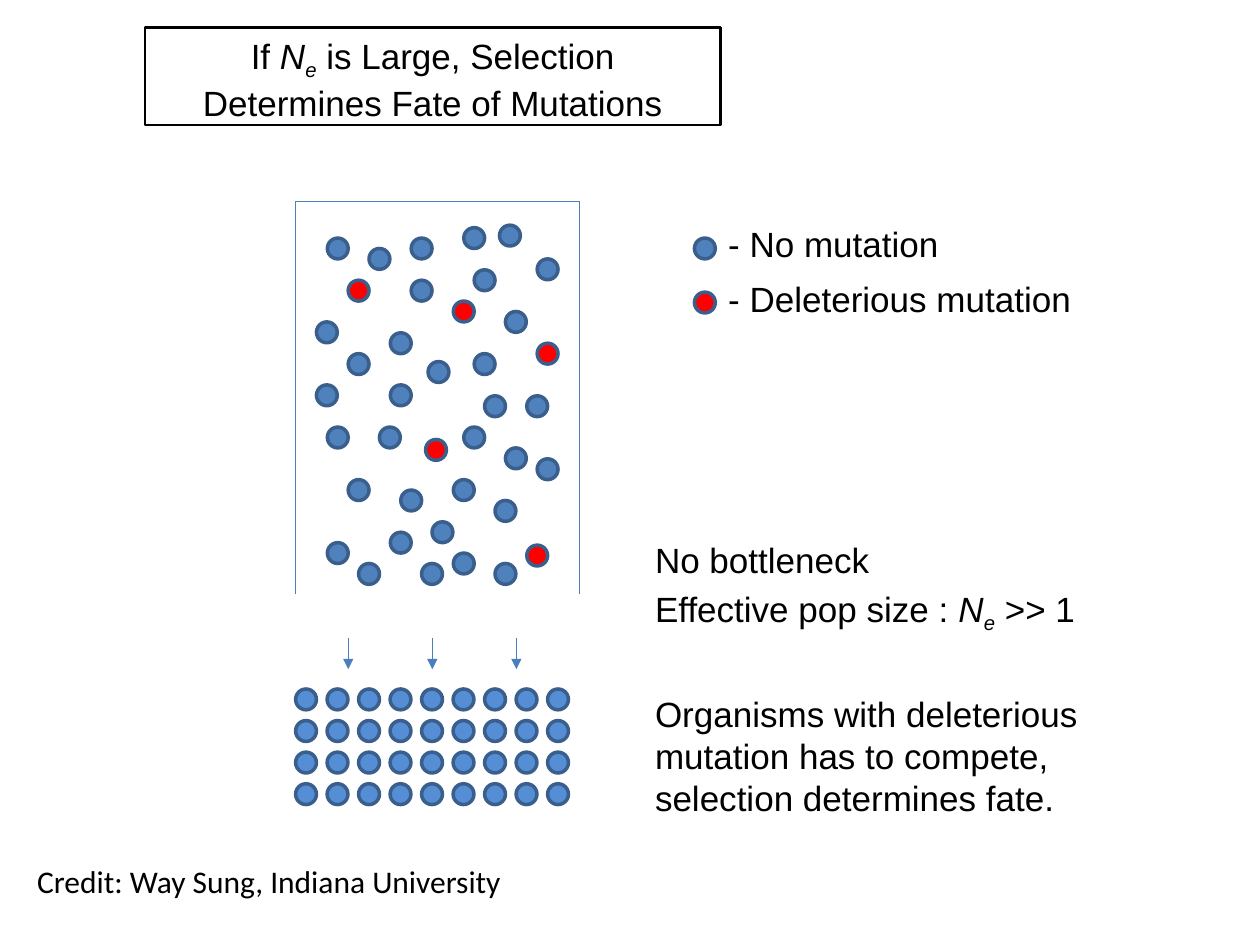
from dataclasses import dataclass

from lxml.etree import SubElement
from pptx import Presentation
from pptx.dml.color import RGBColor
from pptx.enum.shapes import MSO_CONNECTOR, MSO_SHAPE
from pptx.enum.text import MSO_ANCHOR, MSO_AUTO_SIZE, PP_ALIGN
from pptx.oxml.ns import qn
from pptx.util import Cm, Pt


@dataclass(frozen=True)
class Theme:
    text: RGBColor = RGBColor(0x00, 0x00, 0x00)
    healthy: RGBColor = RGBColor(0x4F, 0x81, 0xBD)
    mutant: RGBColor = RGBColor(0xFF, 0x00, 0x00)
    survivor: RGBColor = RGBColor(0x55, 0x8E, 0xD5)
    outline: RGBColor = RGBColor(0x3A, 0x5F, 0x8C)
    wall: RGBColor = RGBColor(0x4B, 0x7E, 0xBC)
    font: str = "Arial"
    credit_font: str = "Calibri"
    size: Pt = Pt(20)
    credit_size: Pt = Pt(18)


THEME = Theme()
DOT = 0.42

# Offsets in cm from the top left corner of the population tank
HEALTHY_DOTS = [
    (0.64, 0.74), (1.48, 0.95), (2.33, 0.74), (3.39, 0.53), (4.11, 0.48),
    (4.87, 1.16), (2.33, 1.59), (3.6, 1.38), (0.42, 2.43), (1.91, 2.65),
    (4.23, 2.22), (1.06, 3.07), (2.67, 3.23), (3.6, 3.07), (0.42, 3.7),
    (1.91, 3.7), (3.81, 3.92), (4.66, 3.92), (0.64, 4.55), (1.69, 4.55),
    (3.39, 4.55), (4.23, 4.97), (4.87, 5.19), (1.06, 5.61), (2.12, 5.82),
    (3.18, 5.61), (4.02, 6.03), (2.75, 6.46), (0.64, 6.88), (1.91, 6.67),
    (1.27, 7.3), (2.54, 7.3), (3.18, 7.09), (4.02, 7.3),
]
MUTANT_DOTS = [(1.06, 1.59), (3.18, 2.01), (4.87, 2.86), (2.62, 4.8), (4.66, 6.93)]


def set_all(target, values):
    for name, value in values.items():
        setattr(target, name, value)


def place(shape, box):
    names = ("left", "top", "width", "height")
    set_all(shape, dict(zip(names, map(Cm, box))))


def add_dot(slide, left, top, color):
    shape = slide.shapes.add_shape(
        MSO_SHAPE.OVAL, Cm(left), Cm(top), Cm(DOT), Cm(DOT))
    shape.shadow.inherit = False
    shape.fill.solid()
    shape.fill.fore_color.rgb = color
    shape.line.color.rgb = THEME.outline
    shape.line.width = Pt(2)


def add_line(slide, start, end, arrow=False):
    line = slide.shapes.add_connector(
        MSO_CONNECTOR.STRAIGHT, *map(Cm, (*start, *end)))
    line.line.color.rgb = THEME.wall
    line.line.width = Pt(0.75)
    if arrow:
        SubElement(line.line._get_or_add_ln(), qn("a:tailEnd"), type="triangle")
    SubElement(line._element.spPr, qn("a:effectLst"))


def write(paragraph, *parts, font=THEME.font, size=THEME.size):
    """Each part is a text, or a (text, style) pair."""
    for part in parts:
        text, style = (part, "") if isinstance(part, str) else part
        run = paragraph.add_run()
        run.text = text
        set_all(run.font, {"name": font, "size": size, "italic": bool(style)})
        run.font.color.rgb = THEME.text
        if style == "subscript":
            run.font._element.set("baseline", "-25000")


N_E = (("N", "italic"), ("e", "subscript"))


def add_label(slide, box, text, **style):
    label = slide.shapes.add_textbox(*map(Cm, box))
    label.text_frame.word_wrap = False
    write(label.text_frame.paragraphs[0], text, **style)


def build_title(slide, box):
    title = slide.shapes.title
    place(title, box)
    title.line.color.rgb = THEME.text
    title.line.width = Pt(1.5)
    set_all(title.text_frame, {
        "auto_size": MSO_AUTO_SIZE.NONE, "word_wrap": True,
        "vertical_anchor": MSO_ANCHOR.TOP})
    paragraph = title.text_frame.paragraphs[0]
    paragraph.alignment = PP_ALIGN.CENTER
    write(paragraph, "If ", *N_E, " is Large, Selection Determines Fate of Mutations")


def build_population(slide, box):
    left, top, width, height = box
    right, bottom = left + width, top + height
    # Tank open at the bottom
    corners = [(left, bottom), (left, top), (right, top), (right, bottom)]
    for start, end in zip(corners, corners[1:]):
        add_line(slide, start, end)
    # Organisms
    for dots, color in ((HEALTHY_DOTS, THEME.healthy), (MUTANT_DOTS, THEME.mutant)):
        for x, y in dots:
            add_dot(slide, left + x, top + y, color)


def build_arrows(slide, box, count=3):
    left, top, width, height = box
    for index in range(count):
        x = left + index * width / (count - 1)
        add_line(slide, (x, top), (x, top + height), arrow=True)


def build_survivors(slide, box, columns=9, rows=4):
    left, top, width, height = box
    step_x = (width - DOT) / (columns - 1)
    step_y = (height - DOT) / (rows - 1)
    for row in range(rows):
        for column in range(columns):
            add_dot(slide, left + column * step_x, top + row * step_y, THEME.survivor)


def build_legend(slide, box):
    left, top, width, height = box
    entries = (("- No mutation", THEME.healthy),
               ("- Deleterious mutation", THEME.mutant))
    step = height / len(entries)
    for index, (text, color) in enumerate(entries):
        y = top + index * step
        add_dot(slide, left, y + 0.43, color)
        add_label(slide, (left + 0.43, y, width - 0.43, step), text)


def build_notes(slide, box):
    body = slide.placeholders[1]
    place(body, box)
    frame = body.text_frame
    set_all(frame, {"auto_size": MSO_AUTO_SIZE.NONE, "word_wrap": True,
                    "vertical_anchor": MSO_ANCHOR.TOP})
    lines = (
        (4, ["No bottleneck"]),
        (4, ["Effective pop size : ", *N_E, " >> 1"]),
        (33, ["Organisms with deleterious mutation has to compete, "
              "selection determines fate."]),
    )
    for index, (space, parts) in enumerate(lines):
        paragraph = frame.add_paragraph() if index else frame.paragraphs[0]
        paragraph.space_before = Pt(space)
        properties = paragraph._p.get_or_add_pPr()
        properties.set("marL", "0")
        properties.set("indent", "0")
        SubElement(properties, qn("a:buNone"))
        write(paragraph, *parts)


def main():
    presentation = Presentation()
    set_all(presentation, {"slide_width": Cm(25.4), "slide_height": Cm(19.05)})
    slide = presentation.slides.add_slide(presentation.slide_layouts[1])

    build_title(slide, (2.92, 0.56, 11.61, 1.96))
    build_population(slide, (5.96, 4.06, 5.72, 7.92))
    build_arrows(slide, (7.02, 12.86, 3.39, 0.63))
    build_survivors(slide, (5.96, 13.89, 5.5, 2.33))
    build_legend(slide, (14, 4.37, 7.9, 2.18))
    build_notes(slide, (12.95, 10.72, 9.32, 2.54))
    add_label(slide, (0.5, 17.25, 10, 1.02), "Credit: Way Sung, Indiana University",
              font=THEME.credit_font, size=THEME.credit_size)

    presentation.save("out.pptx")


if __name__ == "__main__":
    main()
